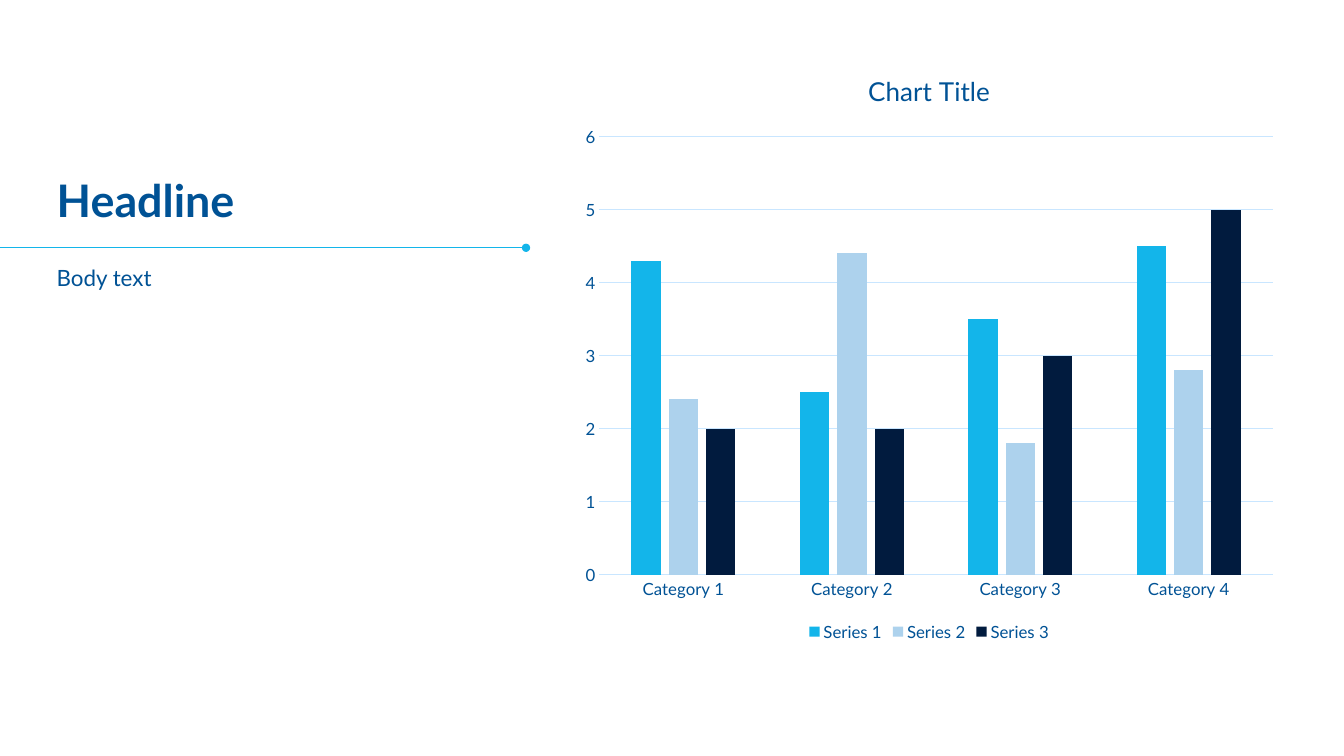
from pptx import Presentation
from pptx.chart.data import CategoryChartData
from pptx.dml.color import RGBColor
from pptx.enum.chart import XL_CHART_TYPE, XL_LEGEND_POSITION, XL_TICK_MARK
from pptx.enum.shapes import MSO_CONNECTOR
from pptx.enum.text import MSO_ANCHOR, MSO_AUTO_SIZE, PP_ALIGN
from pptx.oxml.ns import qn
from pptx.util import Pt
from lxml.etree import SubElement

PX = 9525
FONT = "Lato"
COLORS = {
    "text": "005295",
    "rule": "13B5EA",
    "grid": "C9E6FF",
    "Series 1": "13B5EA",
    "Series 2": "ADD2ED",
    "Series 3": "011B3E",
}
CATEGORIES = [f"Category {number}" for number in range(1, 5)]
SERIES = {
    "Series 1": (4.3, 2.5, 3.5, 4.5),
    "Series 2": (2.4, 4.4, 1.8, 2.8),
    "Series 3": (2, 2, 3, 5),
}


def emu(*lengths):
    return [length * PX for length in lengths]


def color(name):
    return RGBColor.from_string(COLORS[name])


def style_font(font, size, bold=False):
    font.name = FONT
    font.size = Pt(size)
    font.bold = bold
    font.color.rgb = color("text")


def style_line(line, name, width):
    line.color.rgb = color(name)
    line.width = Pt(width)


def fill_text(shape, text, size, anchor, bold=False):
    frame = shape.text_frame
    frame.text = text
    frame.word_wrap = True
    frame.auto_size = MSO_AUTO_SIZE.NONE
    frame.vertical_anchor = anchor
    frame.margin_left = frame.margin_right = 0
    frame.margin_top = frame.margin_bottom = 0
    paragraph = frame.paragraphs[0]
    paragraph.alignment = PP_ALIGN.LEFT
    paragraph.line_spacing = 0.9
    style_font(paragraph.font, size, bold)


def add_rule(slide, right, y):
    """Draw a line from the slide's left edge that ends in a dot."""
    rule = slide.shapes.add_connector(MSO_CONNECTOR.STRAIGHT, *emu(0, y, right, y))
    style_line(rule.line, "rule", 1)
    SubElement(rule.line._get_or_add_ln(), qn("a:tailEnd"), type="oval")
    SubElement(rule._element.spPr, qn("a:effectLst"))


def add_message(slide, left, top, width, height):
    """Set the headline above the rule and the body text below it."""
    headline_height, rule_offset, body_offset = 168, 188, 206
    add_rule(slide, left + width, top + rule_offset)

    headline = slide.shapes.title
    headline.left, headline.top, headline.width, headline.height = emu(
        left, top, width, headline_height)
    fill_text(headline, "Headline", 32, MSO_ANCHOR.BOTTOM, bold=True)

    body = slide.shapes.add_textbox(
        *emu(left, top + body_offset, width, height - body_offset))
    fill_text(body, "Body text", 16, MSO_ANCHOR.TOP)


def style_axes(chart):
    for axis in (chart.category_axis, chart.value_axis):
        axis.major_tick_mark = axis.minor_tick_mark = XL_TICK_MARK.NONE
        style_font(axis.tick_labels.font, 12)
    style_line(chart.category_axis.format.line, "grid", 0.75)

    values = chart.value_axis
    values.minimum_scale, values.maximum_scale, values.major_unit = 0, 6, 1
    values.format.line.fill.background()
    values.has_major_gridlines = True
    style_line(values.major_gridlines.format.line, "grid", 0.75)


def add_column_chart(slide, left, top, width, height):
    data = CategoryChartData()
    data.categories = CATEGORIES
    for name, values in SERIES.items():
        data.add_series(name, values)
    chart = slide.shapes.add_chart(
        XL_CHART_TYPE.COLUMN_CLUSTERED, *emu(left, top, width, height), data).chart
    style_font(chart.font, 10)

    chart.has_title = True
    heading = chart.chart_title.text_frame
    heading.text = "Chart Title"
    style_font(heading.paragraphs[0].font, 18.6)
    chart.chart_title.include_in_layout = False

    chart.has_legend = True
    chart.legend.position = XL_LEGEND_POSITION.BOTTOM
    chart.legend.include_in_layout = False
    style_font(chart.legend.font, 12)

    style_axes(chart)
    plot = chart.plots[0]
    plot.vary_by_categories = False
    plot.gap_width, plot.overlap = 219, -27
    for series in plot.series:
        series.format.fill.solid()
        series.format.fill.fore_color.rgb = color(series.name)


def main():
    deck = Presentation()
    deck.slide_width, deck.slide_height = emu(1280, 720)
    slide = deck.slides.add_slide(deck.slide_layouts[5])
    add_message(slide, 54, 48, 447, 536)
    add_column_chart(slide, 544, 48, 682, 567)
    deck.save("out.pptx")


if __name__ == "__main__":
    main()
